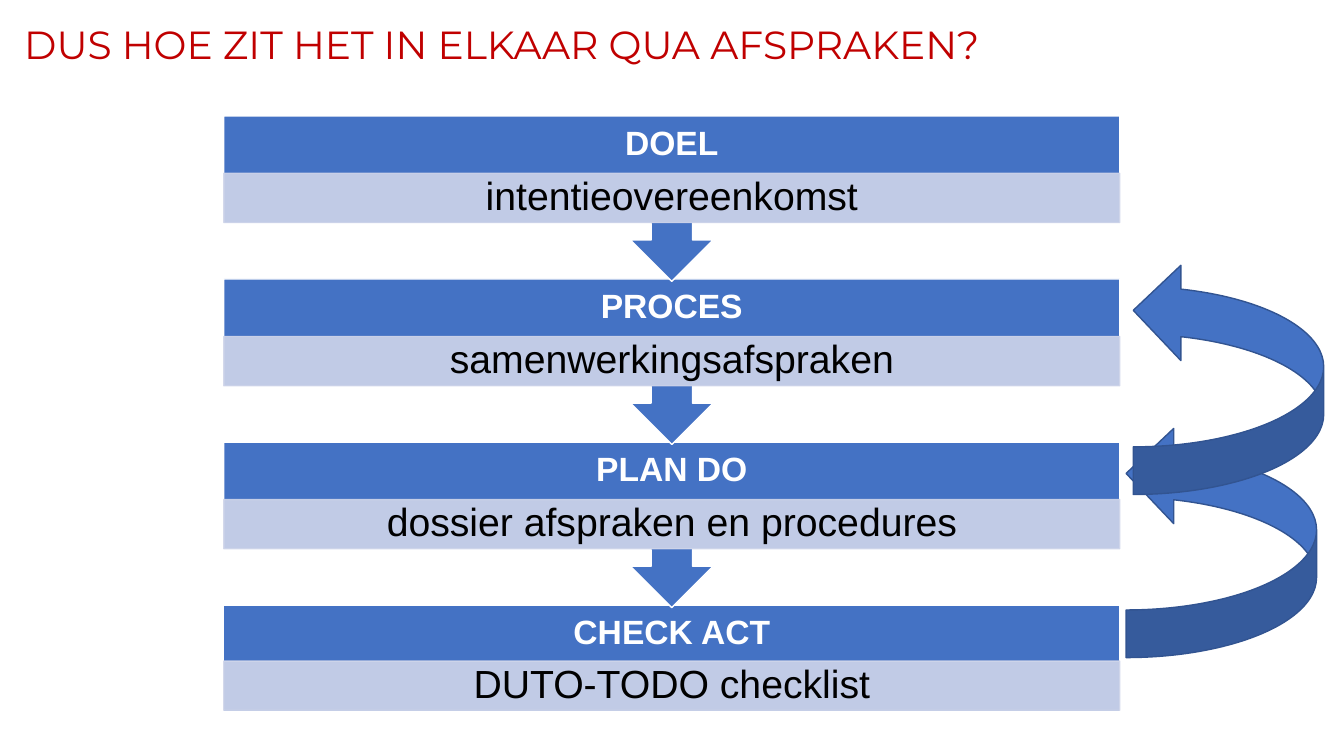
from lxml import etree
from pptx import Presentation
from pptx import util as u
from pptx.dml.color import RGBColor
from pptx.enum import shapes, text
from pptx.oxml.ns import qn

BLUE, PALE, DARK, WHITE = "4472C4", "CFD5EA", "325491", "FFFFFF"
STEPS = [
    ("DOEL", "intentieovereenkomst"),
    ("PROCES", "samenwerkingsafspraken"),
    ("PLAN DO", "dossier afspraken en procedures"),
    ("CHECK ACT", "DUTO-TODO checklist"),
]
PITCH = 4.11


def paint(color_format, color, alpha=None):
    """Set a solid fill, with opacity in percent if given."""
    color_format.solid()
    color_format.fore_color.rgb = RGBColor.from_string(color)
    if alpha:
        node = color_format.fore_color._xFill.find(qn("a:srgbClr"))
        etree.SubElement(node, qn("a:alpha")).set("val", str(alpha * 1000))


def write(shape, words, size, color, font="Arial", bold=False,
          align=text.PP_ALIGN.CENTER, anchor=text.MSO_ANCHOR.MIDDLE, inset=(0.25, 0.13)):
    frame = shape.text_frame
    frame.word_wrap = True
    frame.auto_size = text.MSO_AUTO_SIZE.NONE
    frame.vertical_anchor = anchor
    frame.margin_left = frame.margin_right = u.Cm(inset[0])
    frame.margin_top = frame.margin_bottom = u.Cm(inset[1])
    para = frame.paragraphs[0]
    para.alignment = align
    para.line_spacing = 0.9
    span = para.add_run()
    span.text = words
    span.font.name = font
    span.font.size = u.Pt(size)
    span.font.bold = bold
    span.font.color.rgb = RGBColor.from_string(color)


def add_block(page, kind, box, fill, line, rotation=0, alpha=None):
    shape = page.shapes.add_shape(kind, *map(u.Cm, box))
    shape.shadow.inherit = False
    shape.rotation = rotation
    paint(shape.fill, fill, alpha)
    paint(shape.line.fill, line, alpha)
    shape.line.width = u.Pt(1)
    return shape


def add_title(page, box, words):
    title = page.shapes.title
    title.left, title.top, title.width, title.height = map(u.Cm, box)
    write(title, words, 28, "C00000", font="Montserrat",
          align=text.PP_ALIGN.LEFT, anchor=text.MSO_ANCHOR.BOTTOM)


def add_step(page, box, heading, agreement, last):
    left, top, width, height = box
    if last:
        add_block(page, shapes.MSO_SHAPE.RECTANGLE, (left, top, width, 2.69), BLUE, WHITE)
    else:
        add_block(page, shapes.MSO_SHAPE.UP_ARROW_CALLOUT, box, BLUE, WHITE, rotation=180)
    label = page.shapes.add_textbox(*map(u.Cm, (left, top, width, 1.45)))
    write(label, heading, 24, WHITE, bold=True, inset=(0.48, 0.48))
    offset = 1.41 if last else 1.45
    band = add_block(page, shapes.MSO_SHAPE.RECTANGLE, (left, top + offset, width, 1.24),
                     PALE, PALE, alpha=90)
    write(band, agreement, 28, "000000", inset=(0.56, 0.1))


def add_steps(page, left, top, width):
    """Stack the steps from the last one up, so each arrow lies over the next step."""
    for index, (heading, agreement) in reversed(list(enumerate(STEPS))):
        add_step(page, (left, top + index * PITCH, width, 4.17), heading, agreement,
                 last=index == len(STEPS) - 1)


def add_feedback_arrow(page, left, top):
    add_block(page, shapes.MSO_SHAPE.CURVED_UP_ARROW, (left, top, 5.84, 4.8),
              BLUE, DARK, rotation=270)


def main():
    deck = Presentation()
    deck.slide_width, deck.slide_height = u.Cm(33.87), u.Cm(19.05)
    page = deck.slides.add_slide(deck.slide_layouts[5])
    paint(page.background.fill, WHITE)
    add_title(page, (0.36, 0.33, 32.89, 1.52), "DUS HOE ZIT HET IN ELKAAR QUA AFSPRAKEN?")
    add_steps(page, 5.64, 2.92, 22.58)
    add_feedback_arrow(page, 27.86, 7.14 + PITCH)
    add_feedback_arrow(page, 28.04, 7.14)
    deck.save("out.pptx")


if __name__ == "__main__":
    main()
